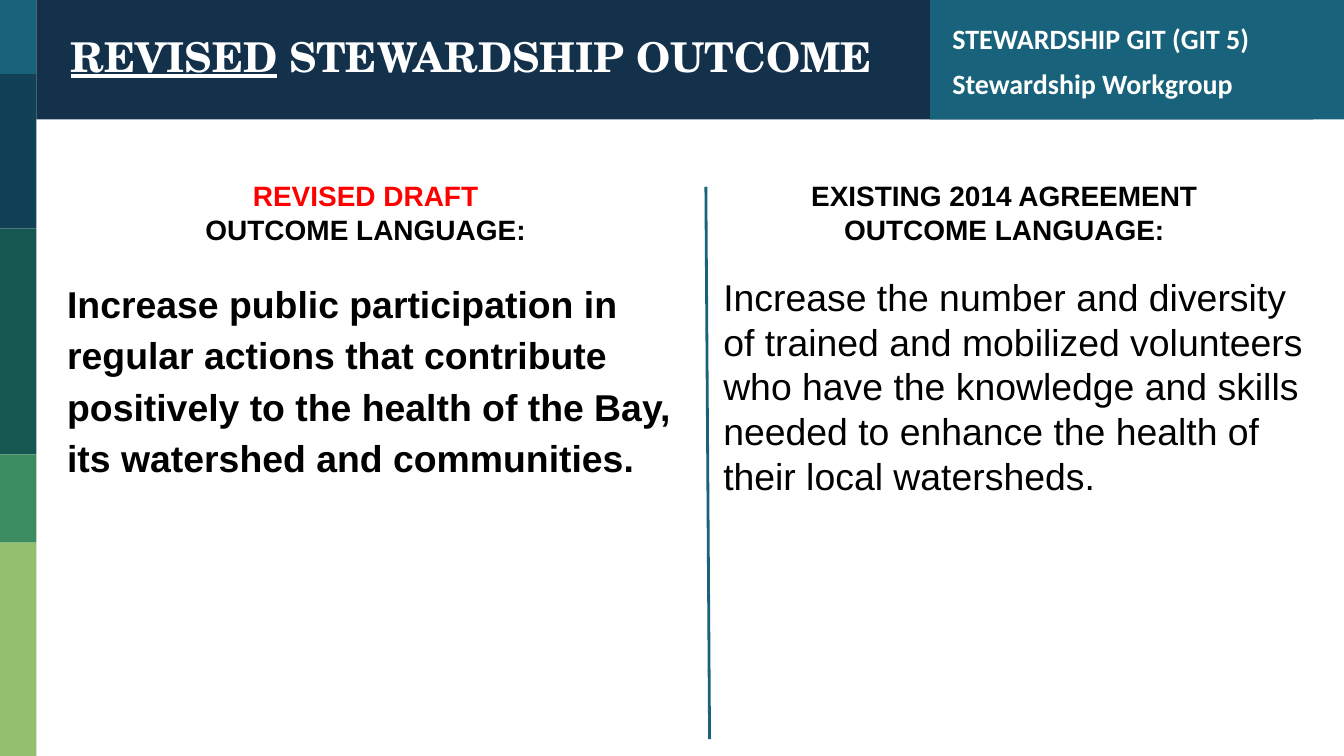
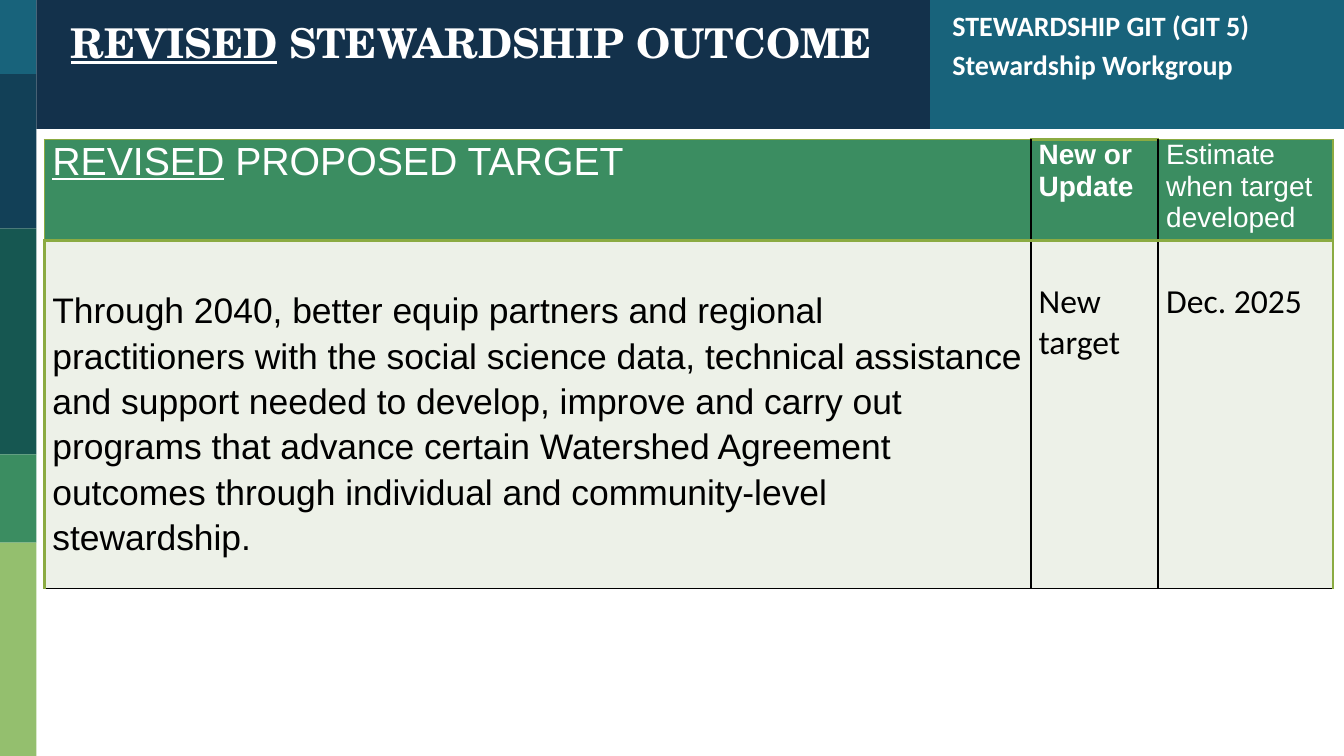
"""Build two slides on the revised stewardship outcome and its target."""
from dataclasses import dataclass, field
from typing import Any, NamedTuple

import lxml.etree
import pptx
import pptx.dml.color
import pptx.enum.shapes
import pptx.enum.text
import pptx.oxml.ns
import pptx.util

Cm, Pt = pptx.util.Cm, pptx.util.Pt
RGBColor = pptx.dml.color.RGBColor
qn = pptx.oxml.ns.qn

WHITE = RGBColor(0xFF, 0xFF, 0xFF)
BLACK = RGBColor(0x00, 0x00, 0x00)
RED = RGBColor(0xFF, 0x00, 0x00)
NAVY = RGBColor(0x13, 0x31, 0x4B)
TEAL = RGBColor(0x18, 0x63, 0x7B)
DEEP_BLUE = RGBColor(0x12, 0x40, 0x57)
PINE = RGBColor(0x16, 0x57, 0x51)
GREEN = RGBColor(0x3B, 0x8D, 0x61)
LIME = RGBColor(0x94, 0xBF, 0x6E)
OLIVE = RGBColor(0x8B, 0xAB, 0x42)
PALE = RGBColor(0xED, 0xF1, 0xE8)

SLIDE_W, SLIDE_H = 25.4, 14.29
RAIL_W = 0.69
RAIL = [(0, TEAL), (1.4, DEEP_BLUE), (4.32, PINE), (8.59, GREEN), (10.26, LIME)]
GROUP_X = 17.58

Format = dict[str, Any]
TITLE: Format = {"name": "TeX Gyre Schola", "size": Pt(22), "bold": True}
GROUP: Format = {"name": "Calibri", "size": Pt(15), "bold": True}
HEADING: Format = {"name": "Arial", "size": Pt(15), "bold": True}
BODY: Format = {"name": "Arial", "size": Pt(20), "bold": False}
TARGET: Format = {"name": "Arial", "size": Pt(21), "bold": False}
STATUS: Format = {"name": "Calibri", "size": Pt(18), "bold": False}
CENTER: Format = {"alignment": pptx.enum.text.PP_ALIGN.CENTER}


class Box(NamedTuple):
    """Left, top, width and height in centimetres."""
    x: float
    y: float
    w: float
    h: float


class Run(NamedTuple):
    """Text with its colour and font format."""
    text: str
    font: Format
    color: RGBColor = BLACK


@dataclass
class Para:
    """Runs with their paragraph format."""
    runs: list[Run]
    fmt: Format = field(default_factory=dict)


@dataclass
class Header:
    """Positions of the title band, which differ from slide to slide."""
    height: float
    title_y: float
    title_h: float
    group_y: float
    group_h: float
    second_line: Format


@dataclass
class CellText:
    """Content of a table cell and the space above it in centimetres."""
    para: Para
    top: float = 0


def set_all(obj: Any, fmt: Format) -> None:
    """Set every attribute in the format on the object."""
    for name, value in fmt.items():
        setattr(obj, name, value)


def write(tf: Any, paras: list[Para]) -> None:
    """Write paragraphs into a text frame."""
    for i, para in enumerate(paras):
        p = tf.add_paragraph() if i else tf.paragraphs[0]
        set_all(p, para.fmt)
        for run in para.runs:
            r = p.add_run()
            r.text = run.text
            set_all(r.font, run.font)
            r.font.color.rgb = run.color


def add_text(s: Any, box: Box, paras: list[Para], dx: float = 0.18, dy: float = 0.18) -> None:
    """Add a wrapping text box with the given insets."""
    tf = s.shapes.add_textbox(*map(Cm, box)).text_frame
    set_all(tf, {"word_wrap": True, "margin_left": Cm(dx), "margin_right": Cm(dx),
                 "margin_top": Cm(dy), "margin_bottom": Cm(dy)})
    write(tf, paras)


def add_rect(s: Any, box: Box, color: RGBColor) -> None:
    """Add a plain filled rectangle."""
    sp = s.shapes.add_shape(pptx.enum.shapes.MSO_SHAPE.RECTANGLE, *map(Cm, box))
    sp.shadow.inherit = False
    sp.fill.solid()
    sp.fill.fore_color.rgb = color
    sp.line.fill.background()


def underlined(first: str, rest: str, font: Format) -> list[Run]:
    """Return white runs with the first word underlined."""
    return [Run(first, font | {"underline": True}, WHITE), Run(rest, font, WHITE)]


def add_slide(prs: Any, header: Header) -> Any:
    """Add a blank slide with the side rail and the title band."""
    s = prs.slides.add_slide(prs.slide_layouts[6])
    ends = [y for y, _ in RAIL[1:]] + [SLIDE_H]
    for (y, color), end in zip(RAIL, ends):
        add_rect(s, Box(0, y, RAIL_W, end - y), color)
    spacing = {"line_spacing": 1.05}
    add_rect(s, Box(RAIL_W, 0, 24.13, header.height), NAVY)
    add_text(s, Box(1.09, header.title_y, 16.18, header.title_h),
             [Para(underlined("REVISED", " STEWARDSHIP OUTCOME", TITLE), spacing)], 0.25, 0.13)
    add_rect(s, Box(GROUP_X, 0, SLIDE_W - GROUP_X, header.height), TEAL)
    add_text(s, Box(17.75, header.group_y, 7.01, header.group_h),
             [Para([Run("STEWARDSHIP GIT (GIT 5)", GROUP, WHITE)], spacing),
              Para([Run("Stewardship Workgroup", GROUP, WHITE)], header.second_line)], 0.25, 0.13)
    return s


def add_divider(s: Any, x1: float, y1: float, x2: float, y2: float) -> None:
    """Add the line between the two columns."""
    cn = s.shapes.add_connector(pptx.enum.shapes.MSO_CONNECTOR.STRAIGHT,
                                *map(Cm, (x1, y1, x2, y2)))
    set_all(cn.line, {"width": Pt(1.5)})
    cn.line.color.rgb = TEAL
    lxml.etree.SubElement(cn.element.spPr, qn("a:effectLst"))


def set_borders(cell: Any, borders: dict[str, tuple[RGBColor, float]]) -> None:
    """Draw the cell borders ahead of the fill."""
    tc_pr = cell._tc.get_or_add_tcPr()
    for i, (side, (color, width)) in enumerate(borders.items()):
        ln = lxml.etree.Element(qn(f"a:ln{side}"), w=str(Pt(width)))
        fill = lxml.etree.SubElement(ln, qn("a:solidFill"))
        lxml.etree.SubElement(fill, qn("a:srgbClr"), val=str(color))
        tc_pr.insert(i, ln)


def add_table(s: Any, x: float, y: float, cols: list[float], rows: list[float],
              cells: list[list[CellText]]) -> None:
    """Add the target table with a green header row."""
    frame = s.shapes.add_table(len(rows), len(cols), *map(Cm, (x, y, sum(cols), sum(rows))))
    tbl = frame.table
    set_all(tbl, {"first_row": False, "horz_banding": False})
    for col, w in zip(tbl.columns, cols):
        col.width = Cm(w)
    for i, h in enumerate(rows):
        tbl.rows[i].height = Cm(h)
        for j, content in enumerate(cells[i]):
            cell = tbl.cell(i, j)
            set_all(cell, {"margin_left": Cm(0.15), "margin_right": Cm(0.15),
                           "margin_top": Cm(content.top), "margin_bottom": 0})
            cell.fill.solid()
            cell.fill.fore_color.rgb = PALE if i else GREEN
            outer, inner = (OLIVE, 1.5 if i else 1), (BLACK, 1.5)
            set_borders(cell, {
                "L": inner if j else outer,
                "R": inner if j < len(cols) - 1 else outer,
                "T": (OLIVE, 1.5 if i or j == 1 else 1),
                "B": (BLACK, 1) if i else (OLIVE, 1.5),
            })
            write(cell.text_frame, [content.para])


def outcome_slide(prs: Any) -> None:
    """Build the comparison of the revised and existing outcomes."""
    s = add_slide(prs, Header(2.26, 0.41, 1.85, 0.25, 1.85,
                              {"line_spacing": 1.05, "space_before": Pt(5)}))
    for x, heading, color in ((1.27, "REVISED DRAFT ", RED),
                              (13.34, "EXISTING 2014 AGREEMENT ", BLACK)):
        add_text(s, Box(x, 3.2, 11.43, 1.57),
                 [Para([Run(heading, HEADING, color)], CENTER),
                  Para([Run("OUTCOME LANGUAGE: ", HEADING)], CENTER)])
    add_divider(s, 13.34, 3.53, 13.41, 13.97)
    add_text(s, Box(1.09, 5, 11.94, 8.69), [Para([Run(
        "Increase public participation in regular actions that contribute positively "
        "to the health of the Bay, its watershed and communities.",
        BODY | {"bold": True})], {"line_spacing": 1.15})])
    add_text(s, Box(13.49, 5, 11.79, 8.69), [Para([Run(
        "Increase the number and diversity of trained and mobilized volunteers who have "
        "the knowledge and skills needed to enhance the health of their local watersheds.",
        BODY)])])


def target_slide(prs: Any) -> None:
    """Build the table of the revised target."""
    s = add_slide(prs, Header(2.44, 0.15, 2.41, 0, 2.44, {"space_before": Pt(3)}))
    head = [
        CellText(Para(underlined("REVISED", " PROPOSED TARGET", TARGET))),
        CellText(Para([Run("New or Update", HEADING, WHITE)])),
        CellText(Para([Run("Estimate when target developed", HEADING | {"bold": False}, WHITE)])),
    ]
    body = [
        CellText(Para([Run(
            "Through 2040, better equip partners and regional practitioners with the social "
            "science data, technical assistance and support needed to develop, improve and "
            "carry out programs that advance certain Watershed Agreement outcomes through "
            "individual and community-level stewardship.",
            BODY | {"size": Pt(19)})], {"line_spacing": 1.15}), 0.86),
        CellText(Para([Run("New target", STATUS)]), 0.77),
        CellText(Para([Run("Dec. 2025", STATUS)]), 0.77),
    ]
    add_table(s, 0.84, 2.64, [18.64, 2.41, 3.3], [1.9, 6.58], [head, body])


def main() -> None:
    """Build and save the presentation."""
    prs = pptx.Presentation()
    set_all(prs, {"slide_width": Cm(SLIDE_W), "slide_height": Cm(SLIDE_H)})
    outcome_slide(prs)
    target_slide(prs)
    prs.save("out.pptx")


if __name__ == "__main__":
    main()
